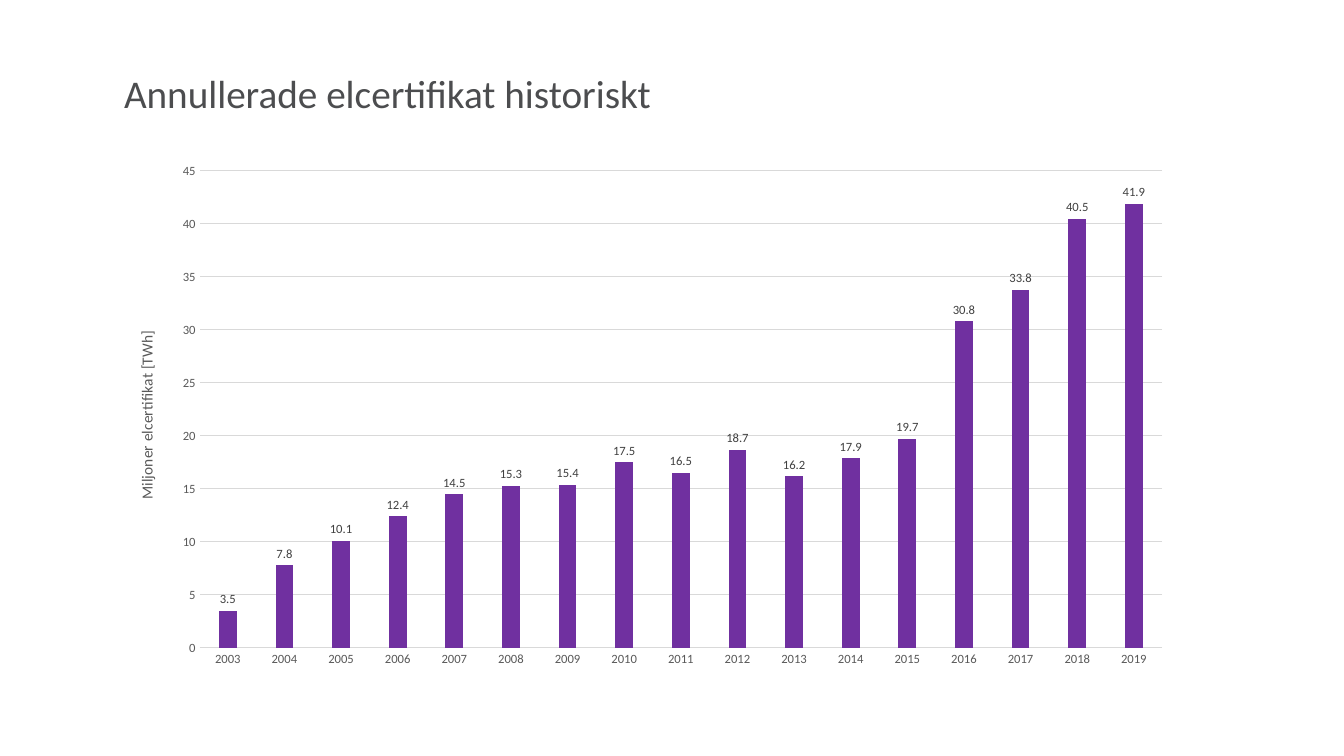
from lxml import etree
from pptx import Presentation
from pptx.chart.data import CategoryChartData
from pptx.dml.color import RGBColor
from pptx.enum.chart import XL_CHART_TYPE, XL_LABEL_POSITION, XL_TICK_MARK
from pptx.enum.text import MSO_ANCHOR, PP_ALIGN
from pptx.oxml.ns import qn
from pptx.util import Inches, Pt

COLUMNS = XL_CHART_TYPE.COLUMN_CLUSTERED
OUTSIDE_END = XL_LABEL_POSITION.OUTSIDE_END
NO_TICK = XL_TICK_MARK.NONE
TOP = MSO_ANCHOR.TOP
LEFT = PP_ALIGN.LEFT
TITLE_ONLY = 5

FIRST_YEAR = 2003
CERTIFICATES = [3.5, 7.8, 10.1, 12.4, 14.5, 15.3, 15.4, 17.5, 16.5,
                18.7, 16.2, 17.9, 19.7, 30.8, 33.8, 40.5, 41.9]


def color(hex_value):
    return RGBColor.from_string(hex_value)


def format_font(font, size, hex_value, bold=False):
    font.name = "Calibri"
    font.size = Pt(size)
    font.bold = bold
    font.color.rgb = color(hex_value)


def write_text(text_frame, text, size, hex_value, align=None):
    paragraph = text_frame.paragraphs[0]
    paragraph.alignment = align
    run = paragraph.add_run()
    run.text = text
    format_font(run.font, size, hex_value)


class SlideBuilder:
    title_color = "4C4D4F"
    axis_color = "595959"
    label_color = "404040"
    grid_color = "D9D9D9"
    bar_color = "7030A0"

    def __init__(self, presentation):
        layout = presentation.slide_layouts[TITLE_ONLY]
        self.slide = presentation.slides.add_slide(layout)

    def title(self, text, left, top, width, height):
        shape = self.slide.shapes.title
        shape.left, shape.top = Inches(left), Inches(top)
        shape.width, shape.height = Inches(width), Inches(height)
        shape.text_frame.vertical_anchor = TOP
        write_text(shape.text_frame, text, 28, self.title_color, align=LEFT)

    def column_chart(self, categories, values, left, top, width, height):
        data = CategoryChartData(number_format="0.0")
        data.categories = categories
        data.add_series("Series 1", values)
        chart = self.slide.shapes.add_chart(
            COLUMNS, Inches(left), Inches(top), Inches(width), Inches(height), data).chart
        chart.has_title = False
        chart.has_legend = False
        format_font(chart.font, 10, "000000")

        # Bars and their value labels
        plot = chart.plots[0]
        plot.gap_width, plot.overlap = 219, -27
        plot.vary_by_categories = False
        fill = plot.series[0].format.fill
        fill.solid()
        fill.fore_color.rgb = color(self.bar_color)
        plot.has_data_labels = True
        labels = plot.data_labels
        labels.show_value = True
        labels.position = OUTSIDE_END
        labels.number_format, labels.number_format_is_linked = "0.0", False
        format_font(labels.font, 9, self.label_color)
        return chart

    def line(self, line_format):
        line_format.color.rgb = color(self.grid_color)
        line_format.width = Pt(0.75)

    def axes(self, chart, value_title, maximum, step):
        for axis in (chart.category_axis, chart.value_axis):
            axis.major_tick_mark = axis.minor_tick_mark = NO_TICK
            format_font(axis.tick_labels.font, 9, self.axis_color)
        self.line(chart.category_axis.format.line)

        value_axis = chart.value_axis
        value_axis.minimum_scale, value_axis.maximum_scale = 0, maximum
        value_axis.major_unit = step
        value_axis.tick_labels.number_format = "0"
        value_axis.tick_labels.number_format_is_linked = False
        value_axis.format.line.fill.background()
        self.line(value_axis.major_gridlines.format.line)
        write_text(value_axis.axis_title.text_frame, value_title, 11, self.axis_color)

    def plot_area(self, chart, **fractions):
        area = chart.plots[0]._element.getparent()
        for old_layout in area.findall(qn("c:layout")):
            area.remove(old_layout)
        layout = etree.Element(qn("c:layout"))
        manual = etree.SubElement(layout, qn("c:manualLayout"))
        settings = {"layoutTarget": "inner", "xMode": "edge", "yMode": "edge", **fractions}
        for name, value in settings.items():
            etree.SubElement(manual, qn(f"c:{name}")).set("val", str(value))
        area.insert(0, layout)


def main():
    presentation = Presentation()
    presentation.slide_width, presentation.slide_height = Inches(13.33), Inches(7.5)
    builder = SlideBuilder(presentation)

    # Heading
    builder.title("Annullerade elcertifikat historiskt", 1.13, 0.64, 11.27, 0.9)

    # Cancelled certificates per year
    years = [str(FIRST_YEAR + index) for index in range(len(CERTIFICATES))]
    chart = builder.column_chart(years, CERTIFICATES, 1.13, 1.54, 10.61, 5.2)
    builder.axes(chart, "Miljoner elcertifikat [TWh]", maximum=45, step=5)
    builder.plot_area(chart, x=0.08, y=0.03, w=0.9, h=0.91)

    presentation.save("out.pptx")


if __name__ == "__main__":
    main()
